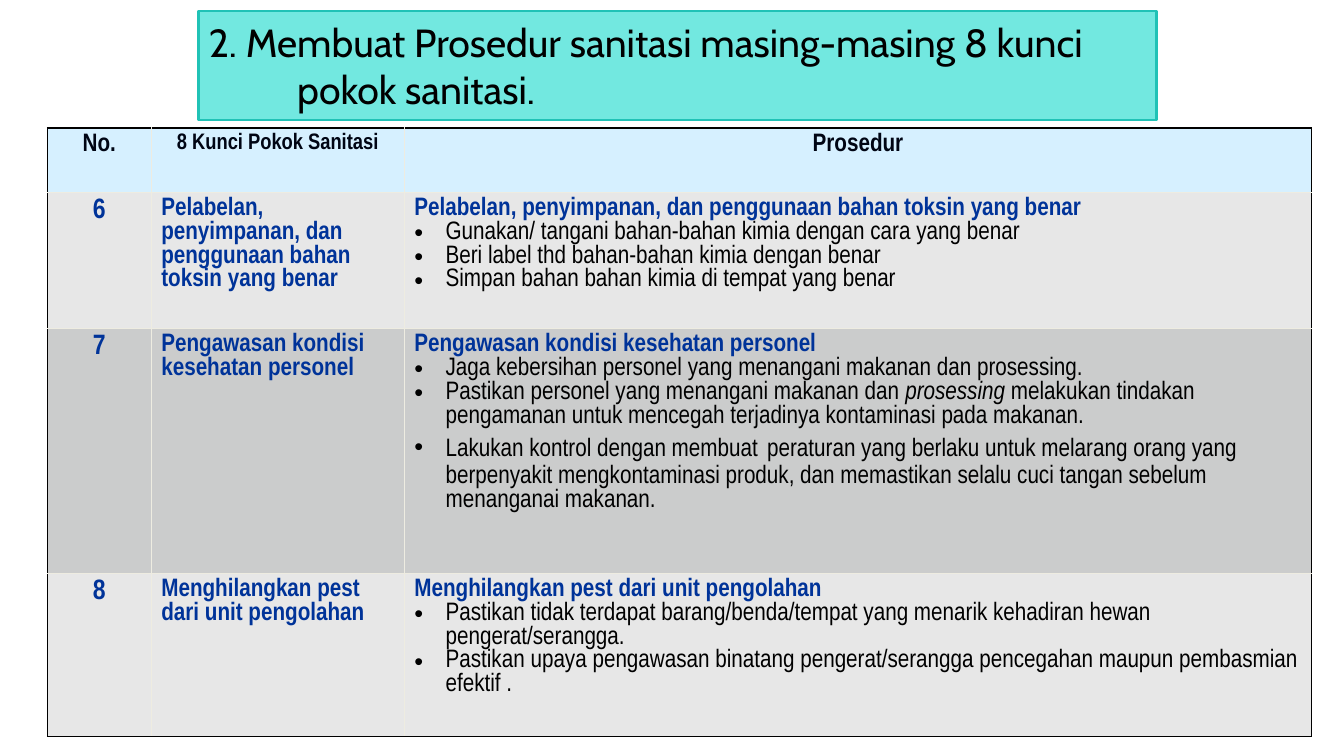
"""Build a slide with the sanitation procedures for key points 6 to 8."""
import pptx
import pptx.dml.color
import pptx.enum.shapes
import pptx.enum.text
import pptx.oxml
import pptx.oxml.ns
import pptx.util

Inches = pptx.util.Inches
Pt = pptx.util.Pt
ALIGN = pptx.enum.text.PP_ALIGN

HEADERS = [("No.", 18), ("8 Kunci Pokok Sanitasi", 16), ("Prosedur", 18)]
PROCEDURES = [
    ("6", "Pelabelan, penyimpanan, dan penggunaan bahan toksin yang benar",
     "Pelabelan, penyimpanan, dan penggunaan bahan toksin yang benar", [
         [("Gunakan/ tangani bahan-bahan kimia dengan cara yang benar", {})],
         [("Beri label thd bahan-bahan kimia dengan benar", {})],
         [("Simpan bahan bahan kimia di tempat yang benar", {})],
     ]),
    ("7", "Pengawasan kondisi kesehatan personel",
     "Pengawasan kondisi kesehatan personel", [
         [("Jaga kebersihan personel yang menangani makanan dan prosessing.", {})],
         [("Pastikan personel yang menangani makanan dan ", {}),
          ("prosessing", {"italic": True}),
          (" melakukan tindakan pengamanan untuk mencegah terjadinya "
           "kontaminasi pada makanan.", {})],
         [("Lakukan kontrol dengan membuat", {}),
          (" ", {"size": 28}),
          ("peraturan yang berlaku untuk melarang orang yang berpenyakit "
           "mengkontaminasi produk, dan memastikan selalu cuci tangan sebelum "
           "menanganai makanan.", {})],
     ]),
    ("8", "Menghilangkan pest dari unit pengolahan",
     "Menghilangkan pest dari unit pengolahan", [
         [("Pastikan tidak terdapat barang/benda/tempat yang menarik kehadiran "
           "hewan pengerat/serangga.", {})],
         [("Pastikan upaya pengawasan binatang pengerat/serangga pencegahan "
           "maupun pembasmian efektif .", {})],
     ]),
]


def rgb(value):
    return pptx.dml.color.RGBColor.from_string(value)


def add_text(paragraph, text, *, size=18, font="Arial Narrow", color="000000",
             bold=False, italic=False):
    run = paragraph.add_run()
    run.text = text
    run.font.size = Pt(size)
    run.font.name = font
    run.font.color.rgb = rgb(color)
    run.font.bold = bold
    run.font.italic = italic


def hang(paragraph, indent, bullet=None):
    properties = paragraph._p.get_or_add_pPr()
    properties.set("marL", str(Inches(indent)))
    properties.set("indent", str(-Inches(indent)))
    if bullet:
        mark = pptx.oxml.ns.nsdecls("a")
        properties.append(pptx.oxml.parse_xml(f'<a:buFont {mark} typeface="Arial"/>'))
        properties.append(pptx.oxml.parse_xml(f'<a:buChar {mark} char="{bullet}"/>'))


class SlideBuilder:
    heading = "003399"
    header_text = "000514"
    header_fill = "D6F0FF"
    row_fills = ("E7E7E7", "CBCCCC")
    outer_border = "000000"
    inner_border = "EEECE1"

    def __init__(self, presentation):
        self.slide = presentation.slides.add_slide(presentation.slide_layouts[6])

    def title(self, text, left, top, width, height):
        shape = self.slide.shapes.add_shape(
            pptx.enum.shapes.MSO_SHAPE.ROUND_2_DIAG_RECTANGLE,
            Inches(left), Inches(top), Inches(width), Inches(height))
        shape.adjustments[0] = 0
        shape.shadow.inherit = False
        shape.fill.solid()
        shape.fill.fore_color.rgb = rgb("72E8E0")
        shape.line.color.rgb = rgb("20C2B6")
        shape.line.width = Pt(2)
        frame = shape.text_frame
        frame.word_wrap = True
        frame.vertical_anchor = pptx.enum.text.MSO_ANCHOR.MIDDLE
        paragraph = frame.paragraphs[0]
        paragraph.alignment = ALIGN.LEFT
        hang(paragraph, 0.88)
        add_text(paragraph, text, size=28, font="Cabin")

    def table(self, left, top, widths, heights):
        frame = self.slide.shapes.add_table(
            len(heights), len(widths), Inches(left), Inches(top),
            Inches(sum(widths)), Inches(sum(heights)))
        table = frame.table
        table.first_row = False
        table.horz_banding = False
        for column, width in zip(table.columns, widths):
            column.width = Inches(width)
        for row, height in zip(table.rows, heights):
            row.height = Inches(height)
        last_row, last_column = len(heights) - 1, len(widths) - 1
        for row in range(len(heights)):
            fill = self.row_fills[(row - 1) % 2] if row else self.header_fill
            for column in range(len(widths)):
                cell = table.cell(row, column)
                cell.fill.solid()
                cell.fill.fore_color.rgb = rgb(fill)
                self.borders(cell, L=column == 0, R=column == last_column,
                             T=row == 0, B=row == last_row)
        return table

    def borders(self, cell, **outer_sides):
        properties = cell._tc.get_or_add_tcPr()
        for position, (side, outer) in enumerate(outer_sides.items()):
            color = self.outer_border if outer else self.inner_border
            properties.insert(position, pptx.oxml.parse_xml(
                f'<a:ln{side} {pptx.oxml.ns.nsdecls("a")} w="{Pt(1)}">'
                f'<a:solidFill><a:srgbClr val="{color}"/></a:solidFill></a:ln{side}>'))

    def label(self, cell, text, size=18, color=None, centered=False):
        paragraph = cell.text_frame.paragraphs[0]
        paragraph.alignment = ALIGN.CENTER if centered else ALIGN.LEFT
        add_text(paragraph, text, size=size, color=color or self.heading, bold=True)

    def bullets(self, cell, items):
        for runs in items:
            paragraph = cell.text_frame.add_paragraph()
            hang(paragraph, 0.31, "•")
            for text, style in runs:
                add_text(paragraph, text, **style)


def main():
    presentation = pptx.Presentation()
    presentation.slide_width = Inches(13.33)
    presentation.slide_height = Inches(7.5)
    builder = SlideBuilder(presentation)
    builder.title("2. Membuat Prosedur sanitasi masing-masing 8 kunci pokok sanitasi.",
                  1.97, 0.11, 9.5, 1.08)
    table = builder.table(0.47, 1.27, [1.03, 2.51, 9], [0.64, 1.35, 2.43, 1.62])
    for column, (text, size) in enumerate(HEADERS):
        builder.label(table.cell(0, column), text, size, builder.header_text, centered=True)
    for row, (number, key_point, heading, items) in enumerate(PROCEDURES, start=1):
        builder.label(table.cell(row, 0), number, 20, centered=True)
        builder.label(table.cell(row, 1), key_point)
        builder.label(table.cell(row, 2), heading)
        builder.bullets(table.cell(row, 2), items)
    presentation.save("out.pptx")


if __name__ == "__main__":
    main()
